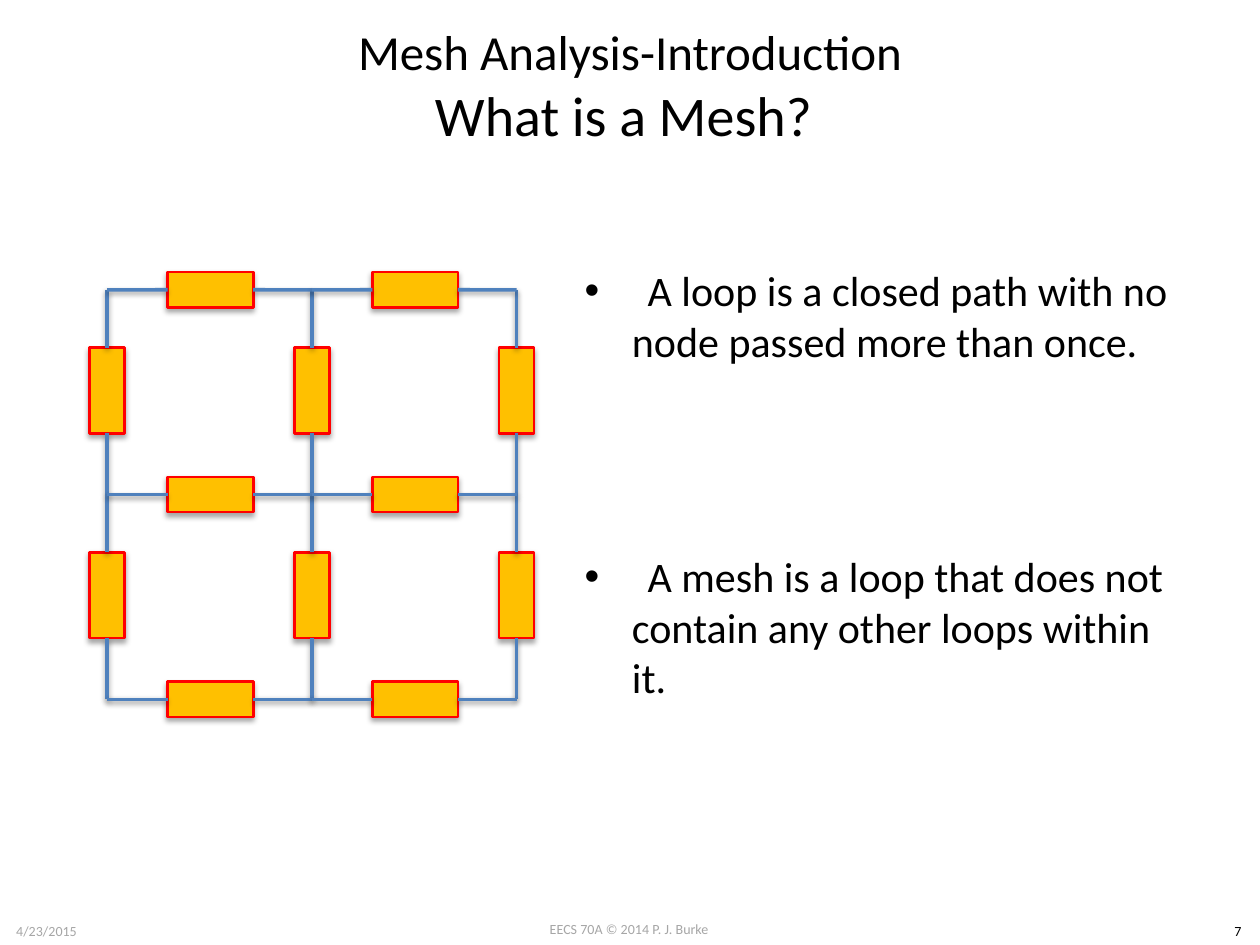
from lxml.etree import SubElement
from pptx import Presentation
from pptx.dml.color import RGBColor
from pptx.enum.shapes import MSO_CONNECTOR, MSO_SHAPE
from pptx.enum.text import MSO_ANCHOR, MSO_AUTO_SIZE, PP_ALIGN
from pptx.oxml.ns import qn
from pptx.util import Inches, Pt


def color(code):
    return RGBColor.from_string(code)


class Deck:
    font = "Calibri"
    wire = "4F81BD"
    body = "FFC000"
    edge = "FF0000"

    def __init__(self, slide):
        self.slide = slide

    def place(self, shape, *box):
        names = ("left", "top", "width", "height")
        for name, value in zip(names, box):
            setattr(shape, name, Inches(value))

    def style(self, run, size, code="000000"):
        for name, value in {"name": self.font, "size": Pt(size)}.items():
            setattr(run.font, name, value)
        run.font.color.rgb = color(code)

    def frame(self, shape, **form):
        for name, value in form.items():
            setattr(shape.text_frame, name, value)
        return shape.text_frame

    def shade(self, shape, alpha, dist):
        effects = SubElement(shape._element.spPr, qn("a:effectLst"))
        shadow = SubElement(effects, qn("a:outerShdw"), blurRad=str(Pt(3.1)),
                            dist=str(Pt(dist)), dir="5400000", rotWithShape="0")
        black = SubElement(shadow, qn("a:srgbClr"), val="000000")
        SubElement(black, qn("a:alpha"), val=str(alpha * 1000))

    def title(self, lines, *box):
        shape = self.slide.shapes.title
        self.place(shape, *box)
        text = self.frame(shape, vertical_anchor=MSO_ANCHOR.TOP,
                          auto_size=MSO_AUTO_SIZE.NONE)
        para = text.paragraphs[0]
        para.alignment = PP_ALIGN.CENTER
        for i, (words, size) in enumerate(lines):
            if i:
                para.add_line_break()
            run = para.add_run()
            run.text = words
            self.style(run, size)

    def bullets(self, items, *box):
        shape = self.slide.placeholders[1]
        self.place(shape, *box)
        text = self.frame(shape, auto_size=MSO_AUTO_SIZE.NONE)
        for i, (words, gap) in enumerate(items):
            para = text.add_paragraph() if i else text.paragraphs[0]
            para.space_before = Pt(gap)
            run = para.add_run()
            run.text = "\t" + words
            self.style(run, 24)

    def label(self, words, code, *box):
        shape = self.slide.shapes.add_textbox(*map(Inches, box))
        para = self.frame(shape, word_wrap=True).paragraphs[0]
        para.alignment = PP_ALIGN.CENTER
        run = para.add_run()
        run.text = words
        self.style(run, 8, code)

    def block(self, *box):
        shape = self.slide.shapes.add_shape(MSO_SHAPE.RECTANGLE, *map(Inches, box))
        shape.fill.solid()
        shape.fill.fore_color.rgb = color(self.body)
        shape.line.color.rgb = color(self.edge)
        shape.line.width = Pt(1.5)
        self.shade(shape, 35, 1.8)
        return shape

    def lead(self, node, block, side):
        x, y = map(Inches, node)
        line = self.slide.shapes.add_connector(MSO_CONNECTOR.STRAIGHT, x, y, x, y)
        line.end_connect(block, side)
        line.line.color.rgb = color(self.wire)
        line.line.width = Pt(2)
        self.shade(line, 38, 1.6)

    def branch(self, x, y, pitch, flat):
        # A resistor between two neighbouring nodes, with a lead to each
        long, thin = 0.68, 0.28
        if flat:
            block = self.block(x + 0.48, y - thin / 2, long, thin)
            last, sides = (x + pitch, y), (1, 3)
        else:
            block = self.block(x - thin / 2, y + 0.46, thin, long)
            last, sides = (x, y + pitch), (0, 2)
        for node, side in zip([(x, y), last], sides):
            self.lead(node, block, side)


def main():
    show = Presentation()
    show.slide_width, show.slide_height = Inches(10), Inches(7.5)
    deck = Deck(show.slides.add_slide(show.slide_layouts[1]))

    # Footer
    deck.label("EECS 70A © 2014 P. J. Burke", "A6A6A6", 3.83, 7.26, 2.33, 0.24)
    deck.label("4/23/2015", "A6A6A6", 0, 7.27, 0.74, 0.24)
    deck.label("7", "000000", 9.65, 7.27, 0.35, 0.24)

    # Title and definitions
    deck.title([("Mesh Analysis-Introduction", 28), ("What is a Mesh? ", 32)],
               0.5, 0.12, 9, 1.25)
    deck.bullets([
        ("A loop is a closed path with no node passed more than once.", 4.8),
        ("A mesh is a loop that does not contain any other loops within it.", 106),
    ], 4.54, 2.05, 4.96, 4.66)

    # Circuit: a grid of two by two meshes
    pitch = 3.25 / 2
    xs = [0.85 + i * pitch for i in range(3)]
    ys = [2.3 + i * pitch for i in range(3)]
    for y in ys[:2]:
        for x in xs:
            deck.branch(x, y, pitch, flat=False)
    for y in ys:
        for x in xs[:2]:
            deck.branch(x, y, pitch, flat=True)

    show.save("out.pptx")


if __name__ == "__main__":
    main()
